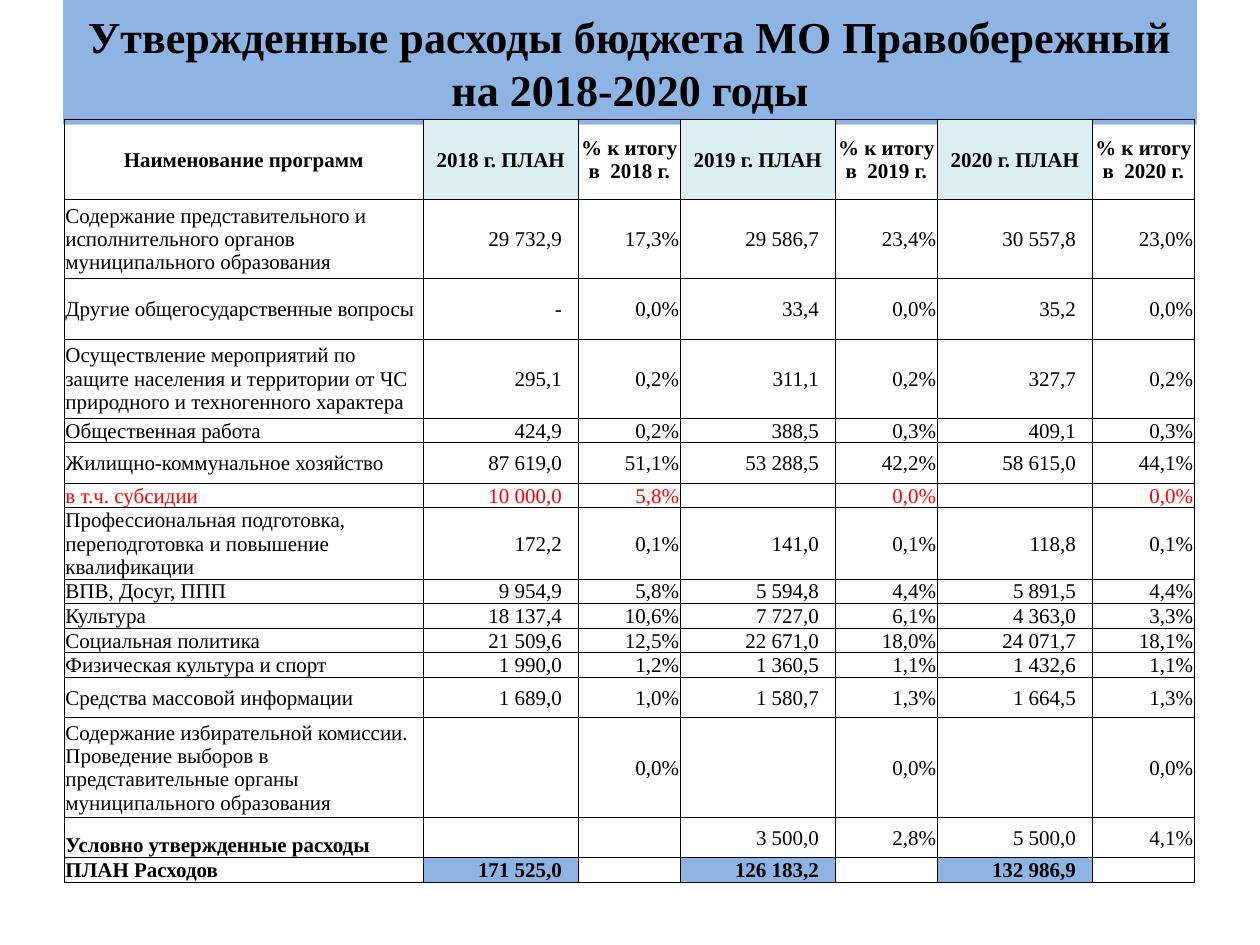
from lxml import etree
from pptx import Presentation
from pptx.dml.color import RGBColor
from pptx.enum.text import MSO_ANCHOR as Anchor, MSO_AUTO_SIZE as AutoSize, PP_ALIGN as Align
from pptx.oxml.ns import qn
from pptx.util import Inches, Pt

COLORS = {"text": "000000", "accent": "FF0000", "band": "8EB4E3", "header": "DAEEF3"}
FONT = "Times New Roman"
YEARS = (2018, 2019, 2020)
COLUMN_WIDTHS = [2.85] + [1.23, 0.81] * len(YEARS)
AMOUNT_COLUMNS = (1, 3, 5)
HEADER_HEIGHT = 0.63
AMOUNT_MARGIN = 0.13

# Row height, programme, then amount and share for each year
PROGRAMS = [
    (0.63, "Содержание представительного и исполнительного органов муниципального образования",
     "29 732,9", "17,3%", "29 586,7", "23,4%", "30 557,8", "23,0%"),
    (0.48, "Другие общегосударственные вопросы", "-", "0,0%", "33,4", "0,0%", "35,2", "0,0%"),
    (0.63, "Осуществление мероприятий по защите населения и территории от ЧС "
     "природного и техногенного характера",
     "295,1", "0,2%", "311,1", "0,2%", "327,7", "0,2%"),
    (0.16, "Общественная работа", "424,9", "0,2%", "388,5", "0,3%", "409,1", "0,3%"),
    (0.32, "Жилищно-коммунальное хозяйство",
     "87 619,0", "51,1%", "53 288,5", "42,2%", "58 615,0", "44,1%"),
    (0.16, "в т.ч. субсидии", "10 000,0", "5,8%", "", "0,0%", "", "0,0%"),
    (0.48, "Профессиональная подготовка, переподготовка и повышение квалификации",
     "172,2", "0,1%", "141,0", "0,1%", "118,8", "0,1%"),
    (0.16, "ВПВ, Досуг, ППП", "9 954,9", "5,8%", "5 594,8", "4,4%", "5 891,5", "4,4%"),
    (0.16, "Культура", "18 137,4", "10,6%", "7 727,0", "6,1%", "4 363,0", "3,3%"),
    (0.16, "Социальная политика",
     "21 509,6", "12,5%", "22 671,0", "18,0%", "24 071,7", "18,1%"),
    (0.16, "Физическая культура и спорт",
     "1 990,0", "1,2%", "1 360,5", "1,1%", "1 432,6", "1,1%"),
    (0.32, "Средства массовой информации",
     "1 689,0", "1,0%", "1 580,7", "1,3%", "1 664,5", "1,3%"),
    (0.79, "Содержание избирательной комиссии. Проведение выборов в "
     "представительные органы муниципального образования",
     "", "0,0%", "", "0,0%", "", "0,0%"),
    (0.32, "Условно утвержденные расходы", "", "", "3 500,0", "2,8%", "5 500,0", "4,1%"),
    (0.16, "ПЛАН Расходов", "171 525,0", "", "126 183,2", "", "132 986,9", ""),
]
SUBSIDY_ROW, RESERVE_ROW, TOTAL_ROW = 6, 14, 15


class BudgetSlide:
    def __init__(self, presentation):
        self.slide = presentation.slides.add_slide(presentation.slide_layouts[5])

    def style(self, paragraph, size, color="text", bold=False, align=Align.LEFT):
        paragraph.alignment = align
        font = paragraph.font
        font.name, font.size, font.bold = FONT, Pt(size), bold
        font.color.rgb = RGBColor.from_string(COLORS[color])

    def title(self, text, left, top, width, height):
        shape = self.slide.shapes.title
        shape.left, shape.top = Inches(left), Inches(top)
        shape.width, shape.height = Inches(width), Inches(height)
        shape.fill.solid()
        shape.fill.fore_color.rgb = RGBColor.from_string(COLORS["band"])
        frame = shape.text_frame
        frame.text = text
        frame.auto_size = AutoSize.NONE
        frame.vertical_anchor = Anchor.MIDDLE
        self.style(frame.paragraphs[0], 25.2, bold=True, align=Align.CENTER)

    def table(self, left, top, widths, heights):
        shape = self.slide.shapes.add_table(
            len(heights), len(widths), Inches(left), Inches(top),
            Inches(sum(widths)), Inches(sum(heights)))
        table = shape.table
        table.first_row = table.horz_banding = False
        for column, width in zip(table.columns, widths):
            column.width = Inches(width)
        for row, height in zip(table.rows, heights):
            row.height = Inches(height)
        return table

    def cell(self, cell, text, fill=None, anchor=Anchor.MIDDLE, right=0.01, **style):
        cell.margin_left = cell.margin_top = Inches(0.01)
        cell.margin_right, cell.margin_bottom = Inches(right), 0
        cell.vertical_anchor = anchor
        self.borders(cell)
        if fill:
            cell.fill.solid()
            cell.fill.fore_color.rgb = RGBColor.from_string(COLORS[fill])
        else:
            cell.fill.background()
        paragraph = cell.text_frame.paragraphs[0]
        if text:
            paragraph.text = text
        else:  # keeps an empty cell as low as its row
            etree.SubElement(paragraph._p, qn("a:endParaRPr"), sz="1200")
        self.style(paragraph, 12, **style)

    def borders(self, cell):
        properties = cell._tc.get_or_add_tcPr()
        for side in ("lnL", "lnR", "lnT", "lnB"):
            line = etree.SubElement(properties, qn(f"a:{side}"), w=str(Pt(0.5)))
            fill = etree.SubElement(line, qn("a:solidFill"))
            etree.SubElement(fill, qn("a:srgbClr"), val=COLORS["text"])


def main():
    presentation = Presentation()
    presentation.slide_width, presentation.slide_height = Inches(10), Inches(7.5)
    budget = BudgetSlide(presentation)
    budget.title("Утвержденные расходы бюджета МО Правобережный на 2018-2020 годы",
                 0.5, 0, 9, 0.99)

    # Header row
    table = budget.table(0.51, 0.95, COLUMN_WIDTHS,
                         [HEADER_HEIGHT] + [program[0] for program in PROGRAMS])
    headings = ["Наименование программ"]
    for year in YEARS:
        headings += [f"{year} г. ПЛАН", f"% к итогу в  {year} г."]
    for column, heading in enumerate(headings):
        budget.cell(table.cell(0, column), heading, bold=True, align=Align.CENTER,
                    fill="header" if column in AMOUNT_COLUMNS else None)

    # Programme rows
    for row, (_, *values) in enumerate(PROGRAMS, start=1):
        total = row == TOTAL_ROW
        for column, value in enumerate(values):
            is_amount = column in AMOUNT_COLUMNS
            reserve_label = row == RESERVE_ROW and column == 0
            budget.cell(
                table.cell(row, column), value,
                fill="band" if total and is_amount else None,
                anchor=Anchor.BOTTOM if total or reserve_label else Anchor.MIDDLE,
                right=AMOUNT_MARGIN if is_amount else 0.01,
                color="accent" if row == SUBSIDY_ROW else "text",
                bold=total or reserve_label,
                align=Align.RIGHT if column else Align.LEFT)

    presentation.save("out.pptx")


if __name__ == "__main__":
    main()
